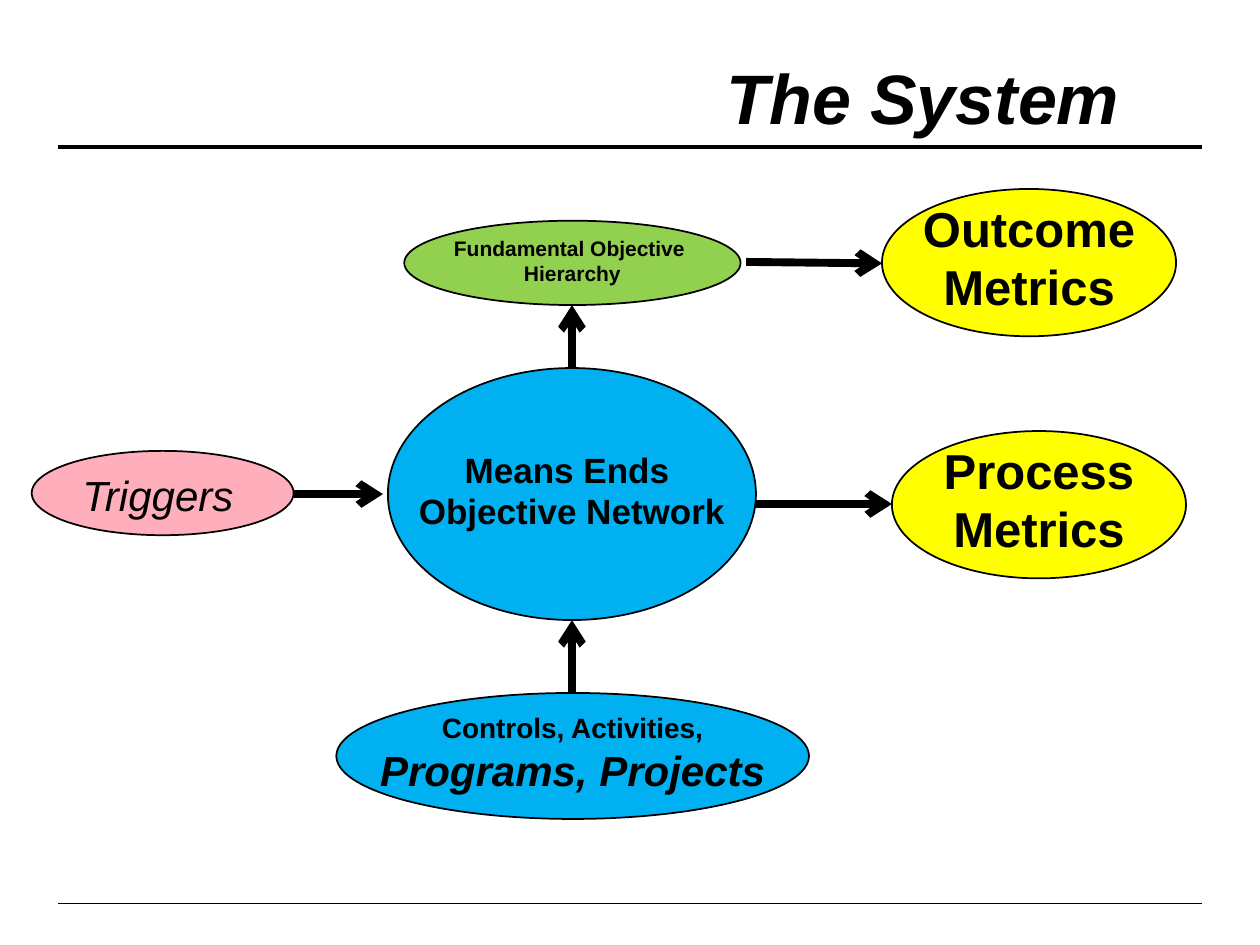
from dataclasses import dataclass

from lxml.etree import SubElement
from pptx import Presentation
from pptx.dml.color import RGBColor
from pptx.enum.shapes import MSO_CONNECTOR as Link, MSO_SHAPE as Form
from pptx.enum.text import MSO_ANCHOR as Anchor, PP_ALIGN as Align
from pptx.oxml.ns import qn
from pptx.util import Cm, Pt

BLACK = "000000"
BLUE = "00B0F0"
YELLOW = "FFFF00"


@dataclass
class Line:
    text: str
    size: int
    bold: bool = True
    slant: bool = False


@dataclass
class Node:
    left: float
    top: float
    width: float
    height: float
    fill: str
    lines: list[Line]
    mid: bool = True


@dataclass
class Rule:
    x1: float
    y1: float
    x2: float
    y2: float
    weight: float = 4.5
    head: bool = True


def paint(target, tone: str) -> None:
    target.rgb = RGBColor.from_string(tone)


def write(frame, lines: list[Line], mid: bool) -> None:
    for rank, line in enumerate(lines):
        para = frame.add_paragraph() if rank else frame.paragraphs[0]
        para.alignment = Align.CENTER if mid else Align.LEFT
        if mid:
            para.line_spacing = 0.8
        if rank:
            para.space_before = Pt(round(line.size * 0.23, 1))
        run = para.add_run()
        run.text = line.text
        font = run.font
        font.name = "Arial"
        font.size = Pt(line.size)
        font.bold = line.bold
        font.italic = line.slant
        paint(font.color, BLACK)


def draw_node(slide, node: Node) -> None:
    box = [Cm(n) for n in (node.left, node.top, node.width, node.height)]
    shape = slide.shapes.add_shape(Form.OVAL, *box)
    shape.shadow.inherit = False
    shape.fill.solid()
    paint(shape.fill.fore_color, node.fill)
    paint(shape.line.color, BLACK)
    shape.line.width = Pt(1)
    frame = shape.text_frame
    frame.word_wrap = not node.mid
    frame.vertical_anchor = Anchor.MIDDLE if node.mid else Anchor.TOP
    write(frame, node.lines, node.mid)


def draw_rule(slide, rule: Rule) -> None:
    ends = [Cm(n) for n in (rule.x1, rule.y1, rule.x2, rule.y2)]
    link = slide.shapes.add_connector(Link.STRAIGHT, *ends)
    paint(link.line.color, BLACK)
    link.line.width = Pt(rule.weight)
    if rule.head:
        SubElement(link.line._get_or_add_ln(), qn("a:tailEnd"), type="arrow")
    SubElement(link._element.spPr, qn("a:effectLst"))


def draw_title(slide, line: Line) -> None:
    box = slide.shapes.add_textbox(Cm(14.4), Cm(0.98), Cm(8.51), Cm(1.63))
    box.text_frame.word_wrap = False
    write(box.text_frame, [line], False)


def main() -> None:
    deck = Presentation()
    deck.slide_width, deck.slide_height = Cm(25.4), Cm(19.05)
    slide = deck.slides.add_slide(deck.slide_layouts[6])

    nodes = [
        Node(8.15, 4.45, 6.78, 1.7, "92D050",
             [Line("Fundamental Objective ", 12), Line("Hierarchy", 12)]),
        Node(7.82, 7.42, 7.42, 5.08, BLUE,
             [Line("Means Ends ", 20), Line("Objective Network", 20)]),
        Node(6.78, 13.97, 9.53, 2.54, BLUE,
             [Line("Controls, Activities,", 16),
              Line("Programs, Projects", 24, slant=True)]),
        Node(17.98, 8.69, 5.93, 2.97, YELLOW,
             [Line("Process", 28), Line("Metrics", 28)]),
        Node(17.78, 3.81, 5.93, 2.97, YELLOW,
             [Line("Outcome", 28), Line("Metrics", 28)]),
        Node(0.64, 9.09, 5.28, 1.7, "FFAEBB",
             [Line("Triggers", 24, False, True)], False),
    ]
    rules = [
        Rule(1.17, 2.97, 24.23, 2.97, 2.25, False),
        Rule(1.17, 18.21, 24.23, 18.21, 0.75, False),
        Rule(11.53, 7.42, 11.53, 6.15),
        Rule(11.53, 13.97, 11.53, 12.5),
        Rule(15.24, 10.16, 17.98, 10.16),
        Rule(15.04, 5.28, 17.78, 5.31),
        Rule(5.92, 9.96, 7.72, 9.96),
    ]
    draw_title(slide, Line("The System", 40, slant=True))
    for node in nodes:
        draw_node(slide, node)
    for rule in rules:
        draw_rule(slide, rule)
    deck.save("out.pptx")


if __name__ == "__main__":
    main()
